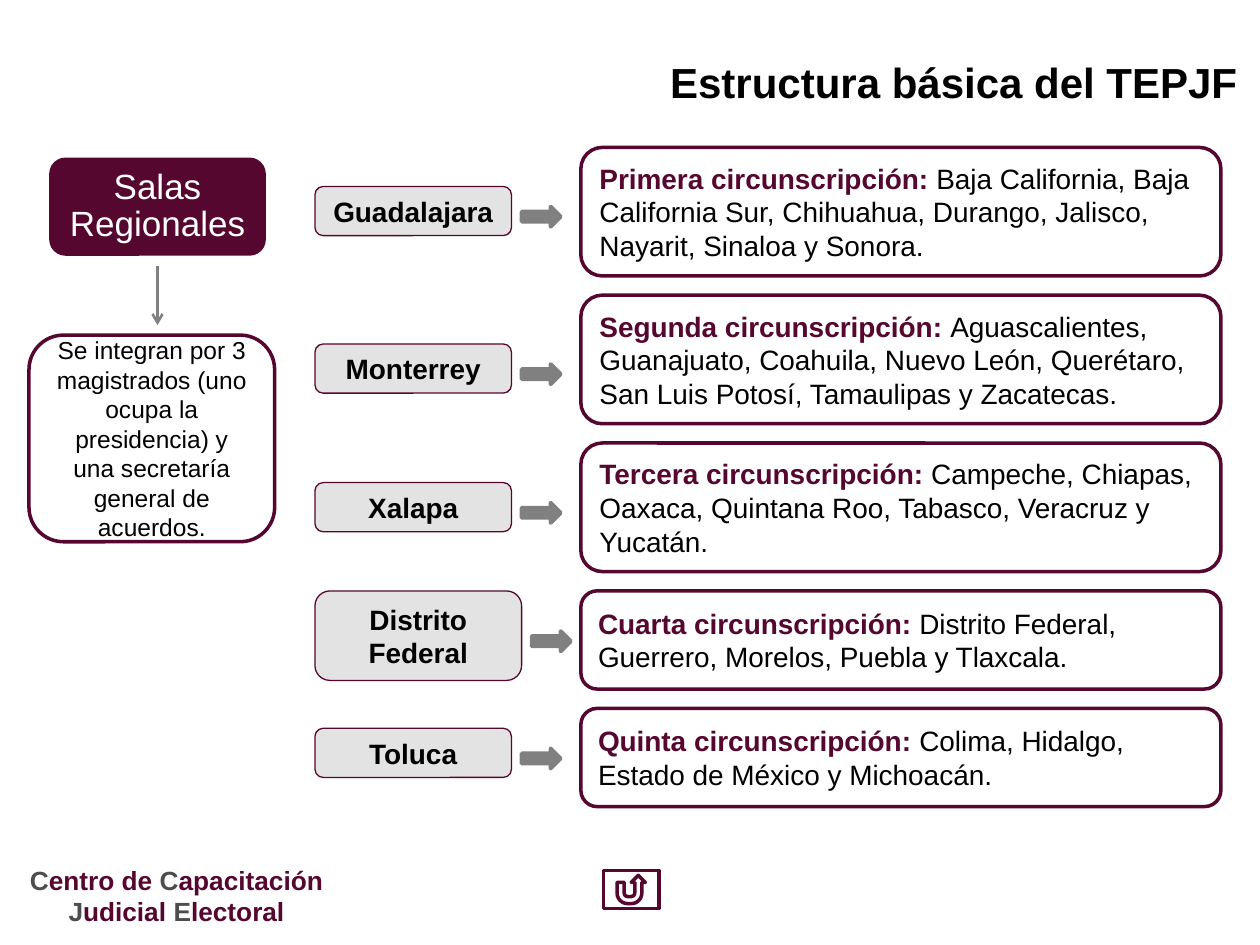
from dataclasses import dataclass

from lxml import etree
from pptx import Presentation, util as u
from pptx.dml.color import RGBColor
from pptx.enum import shapes, text
from pptx.oxml import ns


@dataclass(frozen=True)
class Theme:
    """Colours, type sizes and line widths of the slide."""
    font: str = "Arial"
    wine: str = "56072F"
    gray: str = "808080"
    silver: str = "C0C0C0"
    initial: str = "4D4D4D"
    ink: str = "000000"
    white: str = "FFFFFF"
    title: int = 24
    heading: int = 20
    body: int = 16
    footer: int = 15
    note: int = 14
    frame: float = 2
    thin: float = 0.75
    bold_line: float = 2.25
    link: float = 1.5


THEME = Theme()
SHAPE = shapes.MSO_SHAPE
CENTER = text.PP_ALIGN.CENTER
COLUMNS, ROWS = 100, 75


def write(frame, paragraphs, size, color=THEME.ink, bold=False, align=text.PP_ALIGN.LEFT,
          spacing=1.0, wrap=True, anchor=text.MSO_ANCHOR.MIDDLE):
    """Fill a text frame with paragraphs of (words, overrides) runs."""
    frame.word_wrap = wrap
    frame.vertical_anchor = anchor
    frame.auto_size = text.MSO_AUTO_SIZE.NONE
    for index, runs in enumerate(paragraphs):
        paragraph = frame.add_paragraph() if index else frame.paragraphs[0]
        paragraph.alignment = align
        paragraph.line_spacing = spacing
        paragraph.space_before = u.Pt(0)
        for words, changes in runs:
            run = paragraph.add_run()
            run.text = words
            run.font.name = THEME.font
            run.font.size = u.Pt(size)
            run.font.bold = changes.get("bold", bold)
            run.font.color.rgb = RGBColor.from_string(changes.get("color", color))


class Board:
    """Holds the theme and the current slide, and draws on a grid."""

    def __init__(self, presentation, theme):
        """Add a title-only slide to the presentation."""
        self.theme = theme
        self.column = presentation.slide_width / COLUMNS
        self.row = presentation.slide_height / ROWS
        self.slide = presentation.slides.add_slide(presentation.slide_layouts[5])

    def place(self, left, top, width, height):
        """Turn grid units into slide lengths."""
        return [round(value) for value in (left * self.column, top * self.row,
                                           width * self.column, height * self.row)]

    def title(self, words, area):
        """Move and format the title placeholder."""
        shape = self.slide.shapes.title
        shape.left, shape.top, shape.width, shape.height = self.place(*area)
        write(shape.text_frame, [[(words, {})]], self.theme.title, bold=True,
              align=text.PP_ALIGN.RIGHT, spacing=0.9)

    def label(self, paragraphs, area, **style):
        """Add a plain text box."""
        box = self.slide.shapes.add_textbox(*self.place(*area))
        write(box.text_frame, paragraphs, **style)

    def shape(self, kind, area, fill=None, alpha=None, line=None, width=None, runs=(), **style):
        """Add a preset shape with optional text."""
        shape = self.slide.shapes.add_shape(kind, *self.place(*area))
        shape.shadow.inherit = False
        if fill:
            shape.fill.solid()
            shape.fill.fore_color.rgb = RGBColor.from_string(fill)
        else:
            shape.fill.background()
        if alpha:
            color = shape.fill._xPr.find(".//" + ns.qn("a:srgbClr"))
            etree.SubElement(color, ns.qn("a:alpha")).set("val", str(alpha * 1000))
        if line:
            shape.line.color.rgb = RGBColor.from_string(line)
            shape.line.width = u.Pt(width)
        else:
            shape.line.fill.background()
        if runs:
            write(shape.text_frame, [runs], **style)

    def arrow_line(self, x, top, bottom):
        """Add a vertical line with an open arrowhead at the bottom."""
        start_x, start_y, end_x, end_y = self.place(x, top, x, bottom)
        line = self.slide.shapes.add_connector(shapes.MSO_CONNECTOR.STRAIGHT,
                                               start_x, start_y, end_x, end_y)
        line.line.color.rgb = RGBColor.from_string(self.theme.gray)
        line.line.width = u.Pt(self.theme.link)
        etree.SubElement(line.line._get_or_add_ln(), ns.qn("a:tailEnd")).set("type", "arrow")
        etree.SubElement(line._element.spPr, ns.qn("a:effectLst"))

    def framed(self, area, runs, **style):
        """Add a rounded box with a wine outline."""
        self.shape(SHAPE.ROUNDED_RECTANGLE, area, line=self.theme.wine,
                   width=self.theme.frame, runs=runs, **style)

    def city(self, name, top, width, height):
        """Add a city box and the block arrow to its right."""
        theme, left = self.theme, 25
        self.shape(SHAPE.ROUNDED_RECTANGLE, (left, top, width, height), fill=theme.silver,
                   alpha=43, line=theme.wine, width=theme.thin, runs=[(name, {})],
                   size=theme.body, bold=True, align=CENTER, wrap=" " in name)
        self.shape(SHAPE.RIGHT_ARROW, (left + width + 0.8, top + height / 2 - 0.35, 3.1, 1.6),
                   fill=theme.gray, line=theme.gray, width=theme.bold_line)


REGIONS = [
    ("Guadalajara", 14.8, "Primera", 10.2, "Baja California, Baja California Sur, Chihuahua, "
     "Durango, Jalisco, Nayarit, Sinaloa y Sonora."),
    ("Monterrey", 27.3, "Segunda", 10.2, "Aguascalientes, Guanajuato, Coahuila, Nuevo León, "
     "Querétaro, San Luis Potosí, Tamaulipas y Zacatecas."),
    ("Xalapa", 38.3, "Tercera", 10.2, "Campeche, Chiapas, Oaxaca, Quintana Roo, Tabasco, "
     "Veracruz y Yucatán."),
    ("Distrito Federal", 46.9, "Cuarta", 7.8, "Distrito Federal, Guerrero, Morelos, Puebla "
     "y Tlaxcala."),
    ("Toluca", 57.8, "Quinta", 7.8, "Colima, Hidalgo, Estado de México y Michoacán."),
]
REGION_TOP, REGION_GAP = 11.7, 1.53


def main():
    """Build the slide and save it."""
    presentation = Presentation()
    presentation.slide_width, presentation.slide_height = u.Inches(10), u.Inches(7.5)
    board = Board(presentation, THEME)

    board.title("Estructura básica del TEPJF", (37.4, 4.4, 61.8, 4.6))
    board.shape(SHAPE.ROUNDED_RECTANGLE, (3.9, 12.5, 17.2, 7.8), fill=THEME.wine,
                runs=[("Salas Regionales", {})], size=THEME.heading, color=THEME.white,
                align=CENTER, spacing=0.9)
    board.arrow_line(12.5, 21.1, 25.8)
    board.framed((2.3, 26.6, 19.5, 16.4),
                 [("Se integran por 3 magistrados (uno ocupa la presidencia) y una "
                   "secretaría general de acuerdos.", {})], size=THEME.note, align=CENTER)

    top = REGION_TOP
    for city, city_top, ordinal, height, states in REGIONS:
        city_size = (16.4, 7.1) if " " in city else (15.6, 3.9)
        board.city(city, city_top, *city_size)
        heading = (f"{ordinal} circunscripción: ", {"bold": True, "color": THEME.wine})
        board.framed((46.1, top, 50.8, height), [heading, (states, {})], size=THEME.body)
        top += height + REGION_GAP

    initial = {"color": THEME.initial}
    board.label([[("C", initial), ("entro de ", {}), ("C", initial), ("apacitación", {})],
                 [("J", initial), ("udicial ", {}), ("E", initial), ("lectoral", {})]],
                (0.9, 68.3, 26.2, 5.6), size=THEME.footer, color=THEME.wine, bold=True,
                align=CENTER, spacing=0.96, anchor=text.MSO_ANCHOR.TOP)
    board.shape(SHAPE.ACTION_BUTTON_RETURN, (47.9, 69.1, 4.4, 3), line=THEME.wine,
                width=THEME.frame)
    presentation.save("out.pptx")


if __name__ == "__main__":
    main()
